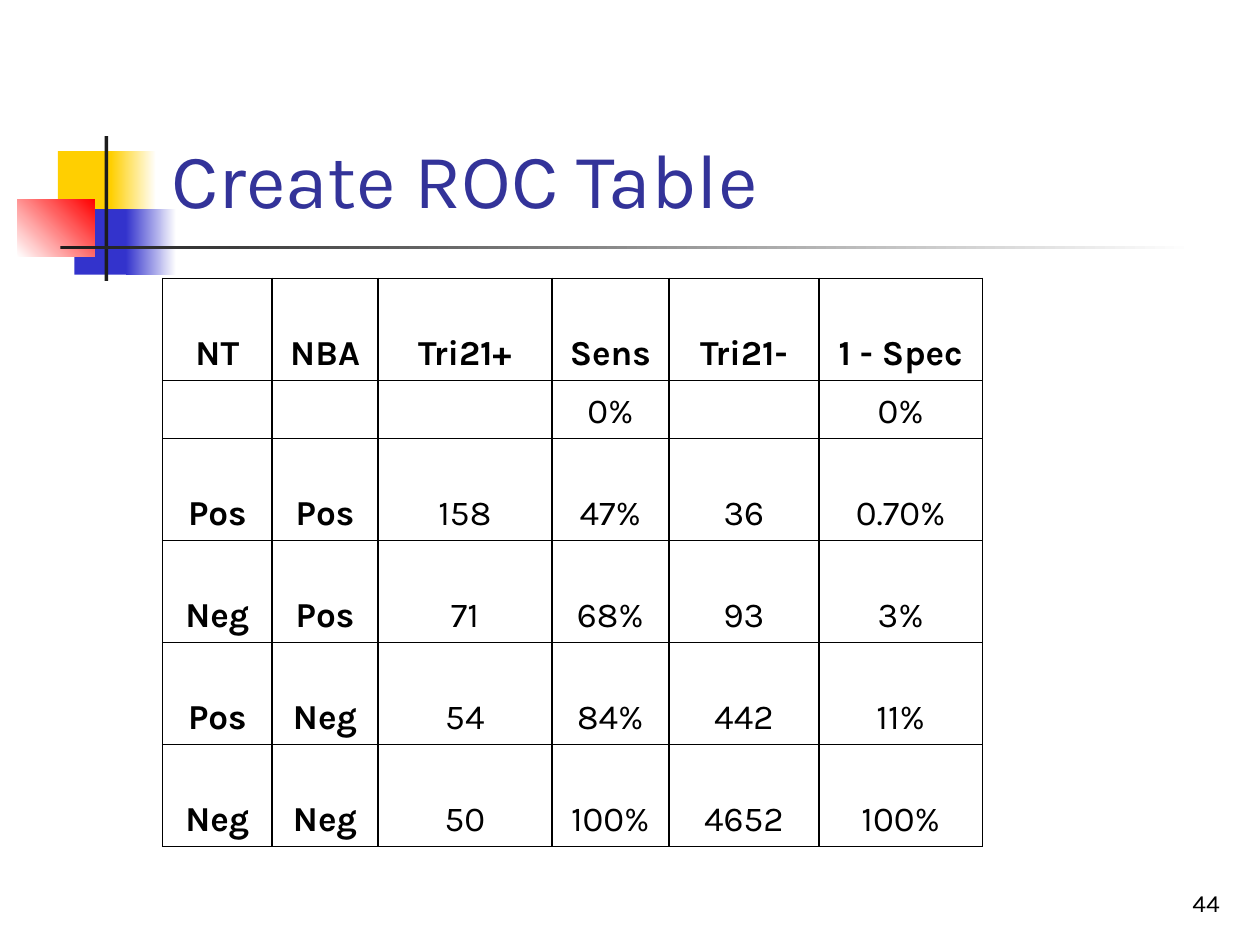
from lxml.etree import SubElement
from pptx import Presentation
from pptx.dml.color import RGBColor
from pptx.enum.shapes import MSO_SHAPE
from pptx.enum.text import MSO_ANCHOR, PP_ALIGN
from pptx.oxml.ns import qn
from pptx.util import Inches, Pt

COLORS = {
    "yellow": "FFCF01",
    "blue": "3333CC",
    "red": "FF0000",
    "dark": "1C1C1C",
    "white": "FFFFFF",
    "title": "333399",
    "black": "000000",
}

COLUMN_WIDTHS = [0.87, 0.84, 1.38, 0.93, 1.19, 1.3]
ROW_HEIGHTS = [0.81, 0.46, 0.81, 0.81, 0.81, 0.81]
ROC_ROWS = [
    ["NT", "NBA", "Tri21+", "Sens", "Tri21-", "1 - Spec"],
    ["", "", "", "0%", "", "0%"],
    ["Pos", "Pos", "158", "47%", "36", "0.70%"],
    ["Neg", "Pos", "71", "68%", "93", "3%"],
    ["Pos", "Neg", "54", "84%", "442", "11%"],
    ["Neg", "Neg", "50", "100%", "4652", "100%"],
]


def rgb(name):
    return RGBColor.from_string(COLORS[name])


def write_text(frame, text, size=20, color="black", bold=False,
               align=PP_ALIGN.LEFT, font="Karla"):
    para = frame.paragraphs[0]
    para.alignment = align
    span = para.add_run()
    span.text = text
    span.font.name = font
    span.font.size = Pt(size)
    span.font.bold = bold
    span.font.color.rgb = rgb(color)


class SlideBuilder:
    def __init__(self, page, border_width=1):
        self.page = page
        self.border_width = border_width

    def block(self, bounds, color, end_color=None, angle=0):
        shape = self.page.shapes.add_shape(MSO_SHAPE.RECTANGLE, *map(Inches, bounds))
        shape.shadow.inherit = False
        shape.line.fill.background()
        if end_color is None:
            shape.fill.solid()
            shape.fill.fore_color.rgb = rgb(color)
            return
        shape.fill.gradient()
        shape.fill.gradient_angle = angle
        for stop, name in zip(shape.fill.gradient_stops, (color, end_color)):
            stop.color.rgb = rgb(name)

    def text(self, bounds, text, **style):
        box = self.page.shapes.add_textbox(*map(Inches, bounds))
        frame = box.text_frame
        frame.word_wrap = True
        frame.vertical_anchor = MSO_ANCHOR.BOTTOM
        write_text(frame, text, **style)

    def border(self, cell):
        properties = cell._tc.get_or_add_tcPr()
        for side in ("a:lnL", "a:lnR", "a:lnT", "a:lnB"):
            line = SubElement(properties, qn(side), w=str(Pt(self.border_width)))
            fill = SubElement(line, qn("a:solidFill"))
            SubElement(fill, qn("a:srgbClr"), val=COLORS["black"])

    def table(self, left, top, widths, heights, rows):
        bounds = (left, top, sum(widths), sum(heights))
        frame = self.page.shapes.add_table(len(rows), len(widths), *map(Inches, bounds))
        table = frame.table
        for column, width in zip(table.columns, widths):
            column.width = Inches(width)
        for row, height in zip(table.rows, heights):
            row.height = Inches(height)
        for row_index, values in enumerate(rows):
            for column_index, value in enumerate(values):
                cell = table.cell(row_index, column_index)
                cell.vertical_anchor = MSO_ANCHOR.BOTTOM
                self.border(cell)
                cell.fill.background()
                if value:
                    write_text(cell.text_frame, value, align=PP_ALIGN.CENTER,
                               bold=row_index == 0 or column_index < 2)


def main():
    deck = Presentation()
    deck.slide_width, deck.slide_height = Inches(10), Inches(7.5)
    slide = SlideBuilder(deck.slides.add_slide(deck.slide_layouts[6]))

    slide.block((0.46, 1.2, 0.48, 0.52), "yellow")
    slide.block((0.88, 1.2, 0.36, 0.52), "yellow", "white")
    slide.block((0.59, 1.66, 0.46, 0.52), "blue")
    slide.block((1, 1.66, 0.4, 0.52), "blue", "white")
    slide.block((0.14, 1.58, 0.61, 0.46), "white", "red", angle=45)
    slide.block((0.83, 1.08, 0.03, 1.15), "dark")
    slide.block((0.48, 1.95, 9, 0.03), "dark", "white")

    slide.text((1.26, 0.23, 8.52, 1.6), "Create ROC Table", size=44, color="title")
    slide.table(1.29, 2.21, COLUMN_WIDTHS, ROW_HEIGHTS, ROC_ROWS)
    slide.text((7.7, 6.83, 2.08, 0.5), "44", size=14, align=PP_ALIGN.RIGHT)

    deck.save("out.pptx")


if __name__ == "__main__":
    main()
